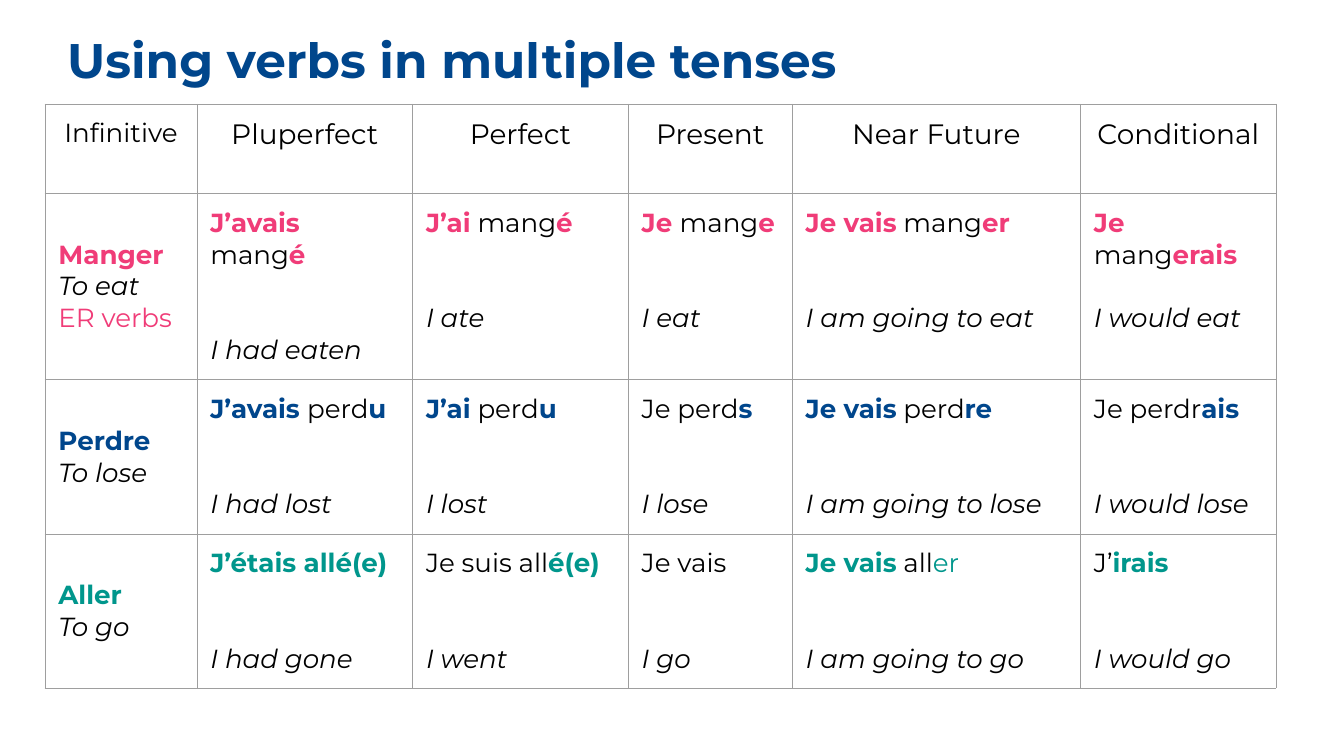
from lxml.etree import SubElement
from pptx import Presentation
from pptx.dml.color import RGBColor
from pptx.enum.text import MSO_ANCHOR, MSO_AUTO_SIZE, PP_ALIGN
from pptx.oxml.ns import qn
from pptx.util import Inches, Pt

BLACK = RGBColor(0x00, 0x00, 0x00)
WHITE = RGBColor(0xFF, 0xFF, 0xFF)
GREY = RGBColor(0x9E, 0x9E, 0x9E)
BLUE = RGBColor(0x00, 0x46, 0x8C)
PINK = RGBColor(0xF0, 0x3C, 0x78)
TEAL = RGBColor(0x00, 0x96, 0x8C)

LINE = 34.1
MARGIN = 0.2
COLUMNS = [2.26, 3.21, 3.21, 2.44, 4.29, 2.91]
ROWS = [1.33, 2.77, 2.29, 2.29]
TENSES = ["Infinitive", "Pluperfect", "Perfect", "Present", "Near Future", "Conditional"]

# Text between asterisks takes the verb colour in bold, or in regular weight after a tilde.
VERBS = [
    (PINK, ["*Manger*", "To eat", "*~ER verbs*"], [
        ("*J’avais* mang*é*", "I had eaten", 2),
        ("*J’ai* mang*é*", "I ate", 2),
        ("*Je *mang*e*", "I eat", 2),
        ("*Je vais* mang*er*", "I am going to eat", 2),
        ("*Je* mang*erais*", "I would eat", 1),
    ]),
    (BLUE, ["*Perdre*", "To lose"], [
        ("*J’avais *perd*u*", "I had lost", 2),
        ("*J’ai* perd*u*", "I lost", 2),
        ("Je perd*s*", "I lose", 2),
        ("*Je vais* perd*re*", "I am going to lose", 2),
        ("Je perdr*ais*", "I would lose", 2),
    ]),
    (TEAL, ["*Aller*", "To go"], [
        ("*J’étais allé(e)*", "I had gone", 2),
        ("Je suis all*é(e)*", "I went", 2),
        ("Je vais", "I go", 2),
        ("*Je vais* all*~er*", "I am going to go", 2),
        ("J’*irais*", "I would go", 2),
    ]),
]


class Deck:
    font = "Montserrat"

    def __init__(self, width, height):
        self.prs = Presentation()
        self.prs.slide_width = Inches(width)
        self.prs.slide_height = Inches(height)
        self.s = self.prs.slides.add_slide(self.prs.slide_layouts[5])

    def style(self, r, size, color=BLACK, bold=False, italic=False):
        r.font.name = self.font
        r.font.size = Pt(size)
        r.font.color.rgb = color
        r.font.bold = bold
        r.font.italic = italic

    def title(self, text, left, top, width, height):
        sp = self.s.shapes.title
        sp.left, sp.top, sp.width, sp.height = map(Inches, (left, top, width, height))
        tf = sp.text_frame
        tf.text = text
        tf.auto_size = MSO_AUTO_SIZE.NONE
        tf.vertical_anchor = MSO_ANCHOR.TOP
        tf.margin_left = tf.margin_right = tf.margin_top = tf.margin_bottom = 0
        p = tf.paragraphs[0]
        p.alignment = PP_ALIGN.LEFT
        p.line_spacing = 1.15
        self.style(p.runs[0], 52, BLUE, bold=True)

    def table(self, left, top, columns, rows):
        frame = self.s.shapes.add_table(
            len(rows), len(columns), Inches(left), Inches(top),
            Inches(sum(columns)), Inches(sum(rows)))
        table = frame.table
        table.first_row = table.horz_banding = False
        for column, width in zip(table.columns, columns):
            column.width = Inches(width)
        for row, height in zip(table.rows, rows):
            row.height = Inches(height)
        for cell in table.iter_cells():
            self.frame_cell(cell)
        return table

    def frame_cell(self, cell):
        cell.margin_left = cell.margin_right = Inches(MARGIN)
        cell.margin_top = cell.margin_bottom = Inches(MARGIN)
        tc_pr = cell._tc.get_or_add_tcPr()
        for side in ("a:lnL", "a:lnR", "a:lnT", "a:lnB"):
            ln = SubElement(tc_pr, qn(side), w=str(Pt(0.75)))
            fill = SubElement(ln, qn("a:solidFill"))
            SubElement(fill, qn("a:srgbClr"), val=str(GREY))
        cell.fill.solid()
        cell.fill.fore_color.rgb = WHITE

    def heading(self, cell, text, size):
        p = cell.text_frame.paragraphs[0]
        p.text = text
        p.alignment = PP_ALIGN.CENTER
        self.style(p.runs[0], size)

    def marked(self, p, text, accent, italic=False):
        for i, part in enumerate(text.split("*")):
            if part:
                r = p.add_run()
                r.text = part.lstrip("~")
                marked = i % 2 == 1
                self.style(r, 28, accent if marked else BLACK,
                           marked and not part.startswith("~"), italic)

    def infinitive(self, cell, lines, accent):
        cell.margin_top = Inches(MARGIN) + Pt(LINE)
        tf = cell.text_frame
        for i, line in enumerate(lines):
            p = tf.add_paragraph() if i else tf.paragraphs[0]
            self.marked(p, line, accent, italic="*" not in line)

    def conjugation(self, cell, french, english, gap, accent):
        tf = cell.text_frame
        self.marked(tf.paragraphs[0], french, accent)
        p = tf.add_paragraph()
        p.space_before = Pt(gap * LINE)
        self.marked(p, english, accent, italic=True)


def main():
    deck = Deck(20, 11.25)
    deck.title("Using verbs in multiple tenses", 1, 0.31, 17.99, 1.78)
    table = deck.table(0.67, 1.55, COLUMNS, ROWS)
    for col, tense in enumerate(TENSES):
        deck.heading(table.cell(0, col), tense, 30 if col else 28)
    for row, (accent, lines, forms) in enumerate(VERBS, 1):
        deck.infinitive(table.cell(row, 0), lines, accent)
        for col, (french, english, gap) in enumerate(forms, 1):
            deck.conjugation(table.cell(row, col), french, english, gap, accent)
    deck.prs.save("out.pptx")


if __name__ == "__main__":
    main()
